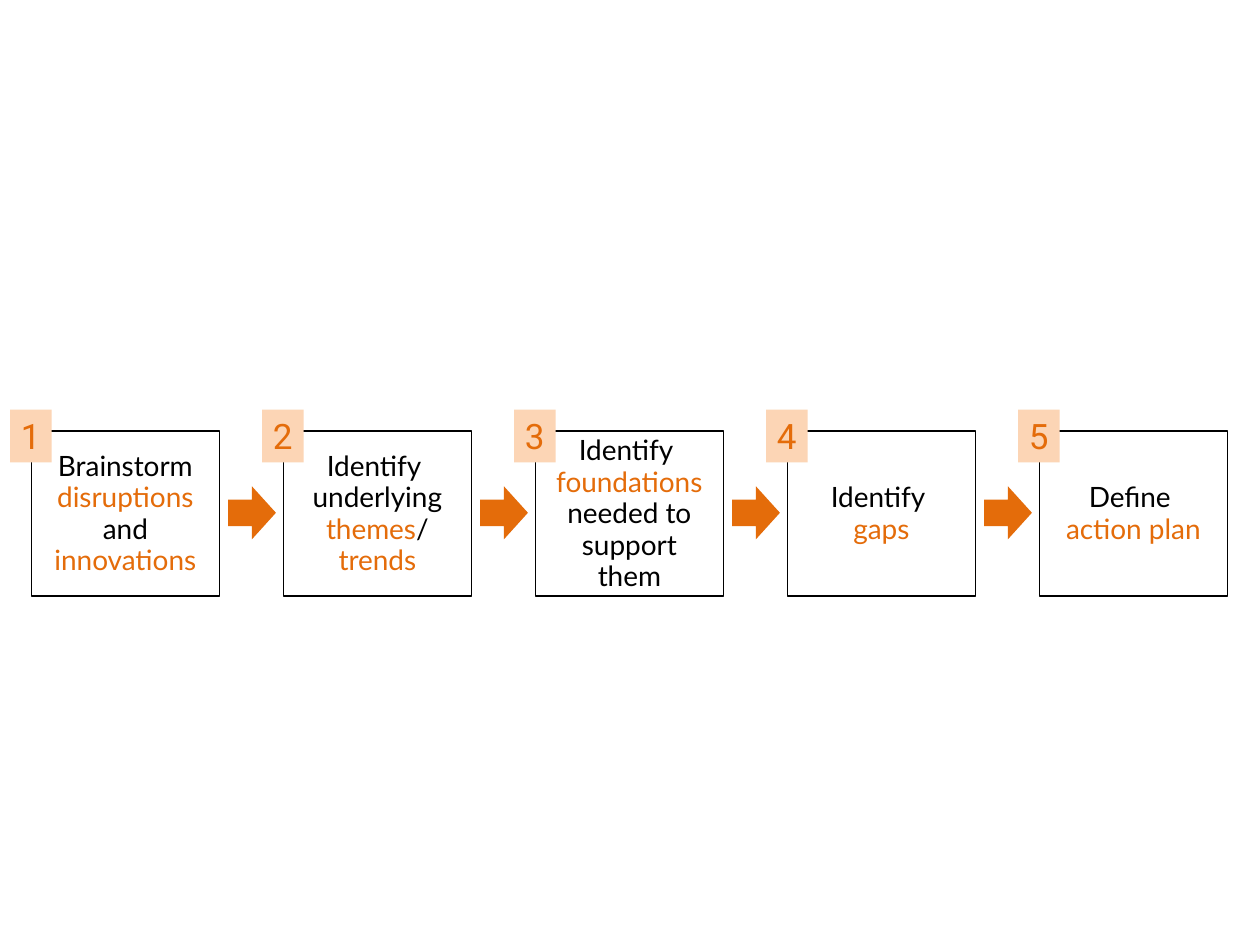
from dataclasses import dataclass

from pptx import Presentation
from pptx.dml.color import RGBColor
from pptx.enum.shapes import MSO_SHAPE as Preset
from pptx.enum.text import MSO_ANCHOR as Anchor, PP_ALIGN as Align
from pptx.shapes.autoshape import Shape
from pptx.slide import Slide
from pptx.util import Inches, Pt


@dataclass(frozen=True)
class Theme:
    accent: RGBColor = RGBColor(0xE4, 0x6C, 0x0A)
    tint: RGBColor = RGBColor(0xFC, 0xD5, 0xB5)
    ink: RGBColor = RGBColor(0, 0, 0)
    paper: RGBColor = RGBColor(255, 255, 255)
    step_font: str = "Lato"
    badge_font: str = "Roboto"
    step_size: Pt = Pt(16)
    step_leading: Pt = Pt(18)
    badge_size: Pt = Pt(20)
    outline: Pt = Pt(0.75)


@dataclass(frozen=True)
class Phrase:
    text: str
    accented: bool = False
    break_before: bool = False


@dataclass(frozen=True)
class Spot:
    """Place of a part within the first step, in inches."""
    left: float
    top: float
    width: float
    height: float


THEME = Theme()
PITCH = 2.0  # distance from one step to the next
STEP = Spot(0.25, 3.42, 1.49, 1.31)
ARROW = Spot(1.81, 3.86, 0.38, 0.42)
BADGE = Spot(0.08, 3.25, 0.33, 0.42)

STEPS: list[list[Phrase]] = [
    [Phrase("Brainstorm "), Phrase("disruptions", True),
     Phrase(" and "), Phrase("innovations", True)],
    [Phrase("Identify "), Phrase("underlying", break_before=True),
     Phrase(" themes", True), Phrase("/ "), Phrase("trends", True)],
    [Phrase("Identify "), Phrase("foundations", True, True),
     Phrase(" needed to support them")],
    [Phrase("Identify "), Phrase("gaps", True, True)],
    [Phrase("Define "), Phrase("action plan", True, True)],
]


def add_part(slide: Slide, preset: Preset, spot: Spot, index: int,
             fill: RGBColor) -> Shape:
    """Draw a flat, unlined shape at its place in the given step."""
    part = slide.shapes.add_shape(
        preset, Inches(spot.left + index * PITCH), Inches(spot.top),
        Inches(spot.width), Inches(spot.height))
    part.shadow.inherit = False
    part.fill.solid()
    part.fill.fore_color.rgb = fill
    part.line.fill.background()
    part.text_frame.vertical_anchor = Anchor.MIDDLE
    part.text_frame.paragraphs[0].alignment = Align.CENTER
    return part


def add_step(slide: Slide, index: int, phrases: list[Phrase]) -> None:
    step = add_part(slide, Preset.RECTANGLE, STEP, index, THEME.paper)
    step.line.color.rgb = THEME.ink
    step.line.width = THEME.outline
    step.text_frame.word_wrap = True
    paragraph = step.text_frame.paragraphs[0]
    paragraph.line_spacing = THEME.step_leading
    for phrase in phrases:
        if phrase.break_before:
            paragraph.add_line_break()
        run = paragraph.add_run()
        run.text = phrase.text
        run.font.name = THEME.step_font
        run.font.size = THEME.step_size
        run.font.color.rgb = THEME.accent if phrase.accented else THEME.ink


def add_badge(slide: Slide, index: int) -> None:
    badge = add_part(slide, Preset.RECTANGLE, BADGE, index, THEME.tint)
    frame = badge.text_frame
    frame.margin_left = frame.margin_right = 0
    paragraph = frame.paragraphs[0]
    paragraph.text = str(index + 1)
    font = paragraph.runs[0].font
    font.name = THEME.badge_font
    font.size = THEME.badge_size
    font.color.rgb = THEME.accent


def main() -> None:
    deck = Presentation()
    deck.slide_width, deck.slide_height = Inches(10), Inches(7.5)
    slide = deck.slides.add_slide(deck.slide_layouts[6])

    # Step boxes, each with its number on the top left corner
    for index, phrases in enumerate(STEPS):
        add_step(slide, index, phrases)
        add_badge(slide, index)

    # Arrows between neighbouring steps
    for index in range(len(STEPS) - 1):
        add_part(slide, Preset.RIGHT_ARROW, ARROW, index, THEME.accent)

    deck.save("out.pptx")


if __name__ == "__main__":
    main()
